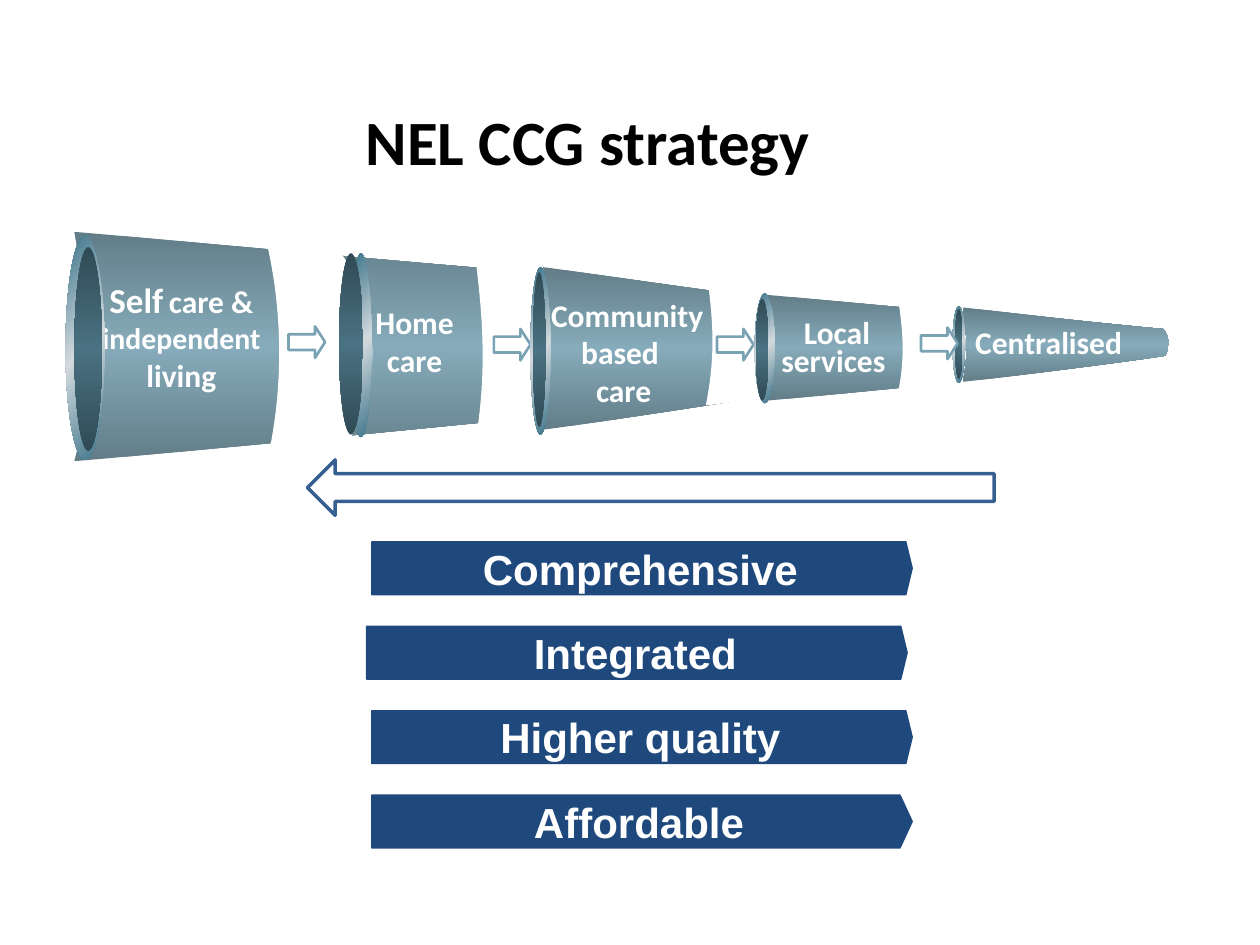
import copy

import lxml.etree
import pptx
import pptx.dml.color
import pptx.enum.shapes
import pptx.enum.text
import pptx.oxml.ns
import pptx.util

SHAPE = pptx.enum.shapes.MSO_SHAPE
ALIGN = pptx.enum.text.PP_ALIGN
MIDDLE = pptx.enum.text.MSO_ANCHOR.MIDDLE
qn = pptx.oxml.ns.qn

# Grid of 100 columns by 75 rows
WIDTH, HEIGHT = pptx.util.Inches(10), pptx.util.Inches(7.5)
COL, ROW = WIDTH / 100, HEIGHT / 75

COLORS = {
    "white": "FFFFFF", "black": "000000", "bar": "1F497D",
    "arrow": "79A2B3", "back_arrow": "376092",
    "cone": "86ABBA", "hole": "4A7282",
    "rim_edge": "3C748A", "rim_mid": "D3DADE",
}
CONE_SHADE, HOLE_SHADE = 0.49, 0.38

# Cone outline in shares of its box: a start, then three points per curve
CONE_START = (0, 0)
CONE_CURVES = [
    (0.02, 0.37), (0.03, 0.62), (0, 1),
    (0.2, 0.94), (0.8, 0.73), (0.98, 0.65),
    (0.99, 0.61), (1, 0.51), (1, 0.47),
    (1, 0.42), (0.98, 0.31), (0.97, 0.29),
    (0.47, 0.16), (0.2, 0.06), (0, 0),
]


def rgb(name):
    return pptx.dml.color.RGBColor.from_string(COLORS[name])


def place(box):
    left, top, width, height = box
    return [round(v) for v in (left * COL, top * ROW, width * COL, height * ROW)]


def paint(sp, fill, line=None, weight=1):
    sp.shadow.inherit = False
    sp.fill.solid()
    sp.fill.fore_color.rgb = rgb(fill)
    if line:
        sp.line.color.rgb = rgb(line)
        sp.line.width = pptx.util.Pt(weight)
    else:
        sp.line.fill.background()


def blend(sp, edge, middle, angle=90, shade=None):
    """Fill with a gradient from edge to middle to edge, the edges shaded if asked."""
    sp.shadow.inherit = False
    sp.line.fill.background()
    sp.fill.gradient()
    sp.fill.gradient_angle = 360 - angle
    stops = sp._element.spPr.find(qn("a:gradFill")).find(qn("a:gsLst"))
    stops.insert(1, copy.deepcopy(stops[0]))
    for stop, pos, color in zip(sp.fill.gradient_stops, (0, 0.5, 1), (edge, middle, edge)):
        stop.position = pos
        stop.color.rgb = rgb(color)
    if shade:
        for stop in (stops[0], stops[2]):
            tone = lxml.etree.SubElement(stop.find(qn("a:srgbClr")), qn("a:shade"))
            tone.set("val", str(round(shade * 100000)))


def format_run(r, font, size, color="white"):
    r.font.name = font
    r.font.size = pptx.util.Pt(size)
    r.font.bold = True
    r.font.color.rgb = rgb(color)


def write_lines(tf, lines, font, sizes, inset=0.07, align=ALIGN.CENTER, spacing=None):
    tf.word_wrap = False
    tf.vertical_anchor = MIDDLE
    tf.margin_left = tf.margin_right = pptx.util.Inches(inset)
    tf.margin_top = tf.margin_bottom = pptx.util.Inches(inset)
    tf.text = "\n".join(lines)
    for p, size in zip(tf.paragraphs, sizes):
        p.alignment = align
        p.line_spacing = spacing
        for r in p.runs:
            format_run(r, font, size)


def add_title(s, text, box):
    sp = s.shapes.title
    sp.left, sp.top, sp.width, sp.height = place(box)
    tf = sp.text_frame
    tf.text = text
    tf.vertical_anchor = MIDDLE
    p = tf.paragraphs[0]
    p.alignment = ALIGN.CENTER
    format_run(p.runs[0], "Calibri", 36, "black")


def add_cone(s, box):
    left, top, width, height = place(box)
    start, *points = [(round(left + x * width), round(top + y * height))
                      for x, y in [CONE_START] + CONE_CURVES]
    builder = s.shapes.build_freeform(*start)
    builder.add_line_segments(points, close=True)
    sp = builder.convert_to_shape()
    # Turn each three line points into one curve
    lines = list(sp._element.iter(qn("a:lnTo")))
    for i in range(0, len(lines), 3):
        curve = lxml.etree.Element(qn("a:cubicBezTo"))
        lines[i].addprevious(curve)
        for line in lines[i:i + 3]:
            curve.append(line[0])
            line.getparent().remove(line)
    return sp


def add_shaded_cone(s, box):
    blend(add_cone(s, box), "cone", "cone", shade=CONE_SHADE)


def add_cut(s, box):
    paint(add_cone(s, box), "white", "white")


def add_shape(s, kind, box, adjustments=()):
    sp = s.shapes.add_shape(kind, *place(box))
    for i, value in enumerate(adjustments):
        sp.adjustments[i] = value
    return sp


def add_opening(s, rim, hole):
    blend(add_shape(s, SHAPE.OVAL, rim), "rim_edge", "rim_mid", angle=45)
    blend(add_shape(s, SHAPE.OVAL, hole), "hole", "hole", shade=HOLE_SHADE)


def add_step_arrow(s, left, top):
    sp = add_shape(s, SHAPE.RIGHT_ARROW, (left, top, 2.9, 2.5), (0.5, 0.32))
    paint(sp, "white", "arrow", 1.5)


def add_label(s, box, lines, sizes=(18, 18, 18), **options):
    sp = s.shapes.add_textbox(*place(box))
    write_lines(sp.text_frame, lines, "Calibri", sizes, **options)
    return sp


def add_bar(s, text, left, top, point):
    sp = add_shape(s, SHAPE.PENTAGON, (left, top, 42.9, 4.2), (point,))
    paint(sp, "bar", "bar", 0.75)
    write_lines(sp.text_frame, [text], "Arial", [24], inset=0.1)


def main():
    prs = pptx.Presentation()
    prs.slide_width, prs.slide_height = WIDTH, HEIGHT
    s = prs.slides.add_slide(prs.slide_layouts[5])
    add_title(s, "NEL CCG strategy", (2.6, 6, 88.1, 10.2))

    # Self care and home care cone, cut off by a white cone
    add_shaded_cone(s, (5.9, 18.4, 64.7, 18.2))
    add_cut(s, (37.4, 17.5, 51.7, 19.8))

    # Community care cone, cut off the same way
    add_shaded_cone(s, (43.1, 21.2, 29.2, 12.9))
    add_cut(s, (56.1, 21.2, 27.2, 10.9))
    for left in (39.2, 56.9):
        add_step_arrow(s, left, 26.1)
    add_opening(s, (42.1, 21.2, 1.6, 13.3), (42.3, 21.6, 1, 12.3))
    add_label(s, (41.5, 27.2, 16, 1.5), [" Community", "based ", "care"])
    self_care = add_label(s, (6.4, 25.9, 16, 1.5),
                          ["Self", "independent", "living"], (20, 17, 18))
    p = self_care.text_frame.paragraphs[0]
    for text, size in ((" ", 14), ("care &", 18)):
        r = p.add_run()
        r.text = text
        format_run(r, "Calibri", size)
    add_opening(s, (5.2, 18.7, 3.1, 17.8), (5.9, 19.6, 2.2, 16.2))

    # Local services cone, cut off the same way
    add_shaded_cone(s, (60.8, 23.4, 29.2, 8.4))
    add_cut(s, (71.2, 22.8, 26.8, 9))
    add_label(s, (60, 27.3, 12.3, 1), [" Local", "services"], spacing=0.75)

    # Centralised cone
    add_shaded_cone(s, (76.4, 24.4, 16.4, 5.9))
    add_opening(s, (75.6, 24.3, 1, 6.1), (75.8, 24.5, 0.6, 5.6))
    add_label(s, (76.7, 25.7, 16.4, 3.4), ["Centralised"], align=ALIGN.LEFT, spacing=0.8)
    add_step_arrow(s, 73.1, 26)
    add_opening(s, (59.9, 23.3, 1.6, 8.7), (60, 23.7, 1, 8.1))

    # Aims
    bars = [("Comprehensive", 29.5, 0.12), ("Integrated", 29.1, 0.12),
            ("Higher quality", 29.5, 0.12), ("Affordable", 29.5, 0.23)]
    for i, (text, left, point) in enumerate(bars):
        add_bar(s, text, left, 43 + 6.7 * i, point)

    # Gap between self care and home care
    gap = add_shape(s, SHAPE.MOON, (20.5, 16.6, 9, 22.8), (0.81,))
    gap.rotation = 180
    paint(gap, "white", "white", 0.75)
    add_label(s, (28.8, 26.3, 8.2, 1.5), ["Home", "care"])
    back = add_shape(s, SHAPE.LEFT_ARROW, (24.4, 36.5, 54.5, 4.4))
    paint(back, "white", "back_arrow", 2)
    add_opening(s, (27.8, 20.1, 1.7, 14.6), (26.9, 20.1, 1.9, 14.4))
    add_step_arrow(s, 22.9, 25.9)

    prs.save("out.pptx")


if __name__ == "__main__":
    main()
